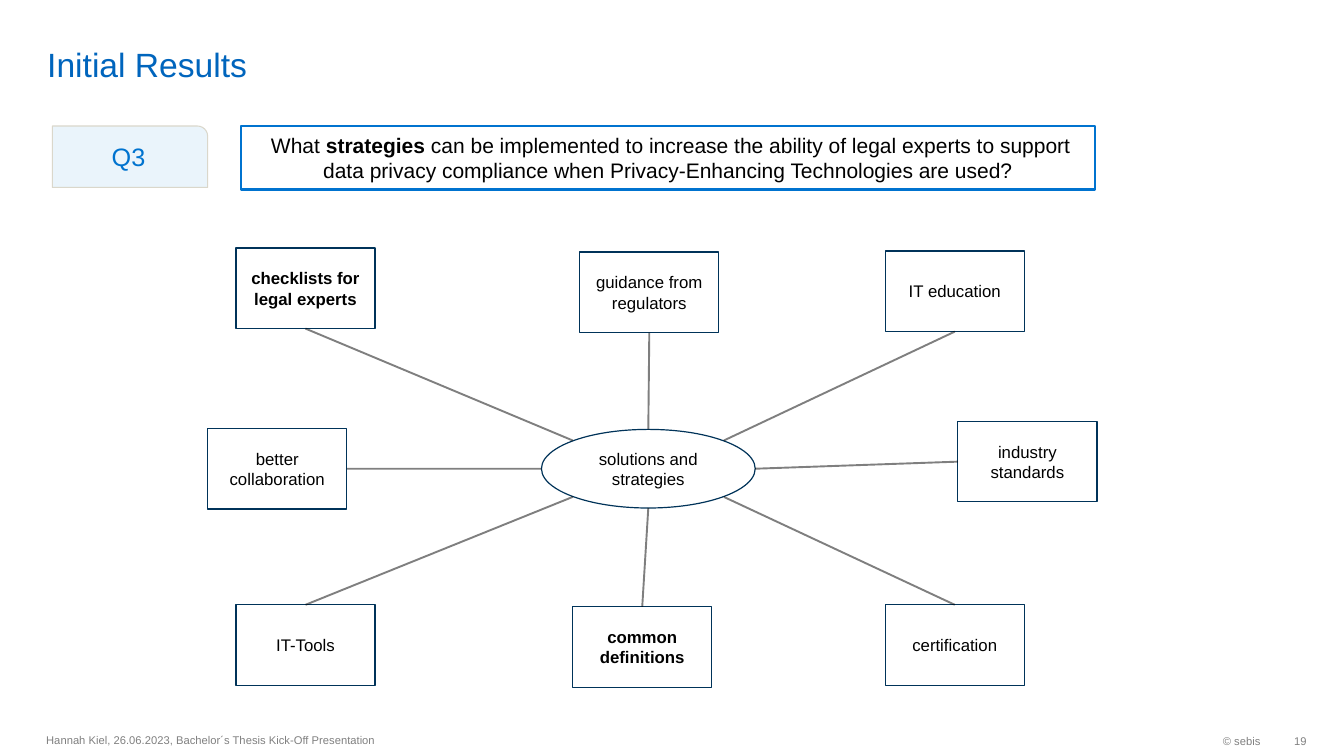
from math import cos, radians, sin

from lxml import etree
from pptx import Presentation
from pptx.dml.color import RGBColor
from pptx.enum.shapes import MSO_CONNECTOR, MSO_SHAPE
from pptx.enum.text import MSO_ANCHOR, PP_ALIGN
from pptx.oxml.ns import qn
from pptx.util import Pt

PX = 9144  # 100 px to the inch

BLACK = RGBColor(0x00, 0x00, 0x00)
WHITE = RGBColor(0xFF, 0xFF, 0xFF)
GREY = RGBColor(0x80, 0x80, 0x80)
TITLE_BLUE = RGBColor(0x00, 0x65, 0xBD)
ACCENT_BLUE = RGBColor(0x00, 0x73, 0xCF)
NAVY = RGBColor(0x00, 0x33, 0x59)
PALE_BLUE = RGBColor(0xEA, 0xF4, 0xFB)
SAND = RGBColor(0xDA, 0xD7, 0xCB)

RECT = MSO_SHAPE.RECTANGLE
ROUND_1 = MSO_SHAPE.ROUND_1_RECTANGLE
OVAL = MSO_SHAPE.OVAL
STRAIGHT = MSO_CONNECTOR.STRAIGHT
LEFT, CENTER, RIGHT = PP_ALIGN.LEFT, PP_ALIGN.CENTER, PP_ALIGN.RIGHT
MIDDLE, BOTTOM = MSO_ANCHOR.MIDDLE, MSO_ANCHOR.BOTTOM
TOP_SIDE, LEFT_SIDE, BOTTOM_SIDE, RIGHT_SIDE = range(4)

HUB = (537, 426, 212, 78)
BOX_W, BOX_H = 138, 80

# left, top, text, bold, joined side, angle on the hub (clockwise from the right)
IDEAS = [
    (234, 246, "checklists for legal experts", True, BOTTOM_SIDE, 225),
    (575, 250, "guidance from regulators", False, BOTTOM_SIDE, 270),
    (878, 249, "IT education", False, BOTTOM_SIDE, 315),
    (950, 418, "industry standards", False, LEFT_SIDE, 0),
    (878, 600, "certification", False, TOP_SIDE, 45),
    (568, 602, "common definitions", True, TOP_SIDE, 90),
    (234, 600, "IT-Tools", False, TOP_SIDE, 135),
    (206, 425, "better collaboration", False, RIGHT_SIDE, 180),
]


class SlideBuilder:
    def __init__(self, slide, font="Arial"):
        self.shapes = slide.shapes
        self.font = font

    def fill_text(self, s, runs, size, color, align, anchor):
        """Fill a shape with one paragraph of (text, bold) runs."""
        tf = s.text_frame
        tf.word_wrap = True
        tf.vertical_anchor = anchor
        p = tf.paragraphs[0]
        p.alignment = align
        for text, bold in runs:
            r = p.add_run()
            r.text = text
            r.font.name = self.font
            r.font.size = Pt(size)
            r.font.bold = bold
            r.font.color.rgb = color
        return tf

    def text(self, box, text, size, color, align=LEFT, anchor=MIDDLE):
        s = self.shapes.add_textbox(*(v * PX for v in box))
        return self.fill_text(s, [(text, False)], size, color, align, anchor)

    def shape(self, kind, box, runs, size=12, color=BLACK, fill=WHITE,
              line=NAVY, width=0.85):
        s = self.shapes.add_shape(kind, *(v * PX for v in box))
        s.shadow.inherit = False
        s.fill.solid()
        s.fill.fore_color.rgb = fill
        s.line.color.rgb = line
        s.line.width = Pt(width)
        self.fill_text(s, runs, size, color, CENTER, MIDDLE)
        return s

    def spoke(self, start, box, side):
        """Draw a half-transparent line from a point to a side of a box."""
        x, y = (v * PX for v in start)
        c = self.shapes.add_connector(STRAIGHT, x, y, x, y)
        c.end_connect(box, side)
        c.line.color.rgb = BLACK
        c.line.width = Pt(1.35)
        sp_pr = c._element.spPr
        color = sp_pr.find(".//" + qn("a:srgbClr"))
        etree.SubElement(color, qn("a:alpha"), val="50000")
        etree.SubElement(sp_pr, qn("a:effectLst"))


def hub_point(angle):
    left, top, width, height = HUB
    a = radians(angle)
    return (round(left + width / 2 * (1 + cos(a))),
            round(top + height / 2 * (1 + sin(a))))


def main():
    prs = Presentation()
    prs.slide_width, prs.slide_height = 1333 * PX, 750 * PX
    b = SlideBuilder(prs.slides.add_slide(prs.slide_layouts[6]))

    tf = b.text((37, 5, 1158, 79), "Initial Results", 24, TITLE_BLUE, anchor=BOTTOM)
    tf.margin_top = tf.margin_bottom = 0

    b.shape(ROUND_1, (52, 125, 154, 61), [("Q3", False)], 18, ACCENT_BLUE,
            PALE_BLUE, SAND, 0.75)
    question = [
        (" What ", False),
        ("strategies ", True),
        ("can be implemented to increase the ability of legal experts to support "
         "data privacy compliance when Privacy-Enhancing Technologies are used?",
         False),
    ]
    b.shape(RECT, (239, 125, 847, 63), question, 15, line=ACCENT_BLUE, width=2)

    b.shape(OVAL, HUB, [("solutions and strategies", False)])
    for left, top, text, bold, side, angle in IDEAS:
        box = b.shape(RECT, (left, top, BOX_W, BOX_H), [(text, bold)])
        b.spoke(hub_point(angle), box, side)

    b.text((36, 718, 630, 32),
           "Hannah Kiel, 26.06.2023, Bachelor´s Thesis Kick-Off Presentation", 8, GREY)
    b.text((1026, 719, 234, 32), "© sebis", 8, GREY, RIGHT)
    tf = b.text((1260, 719, 36, 32), "19", 8, GREY, RIGHT)
    tf.margin_right = 0

    prs.save("out.pptx")


if __name__ == "__main__":
    main()
